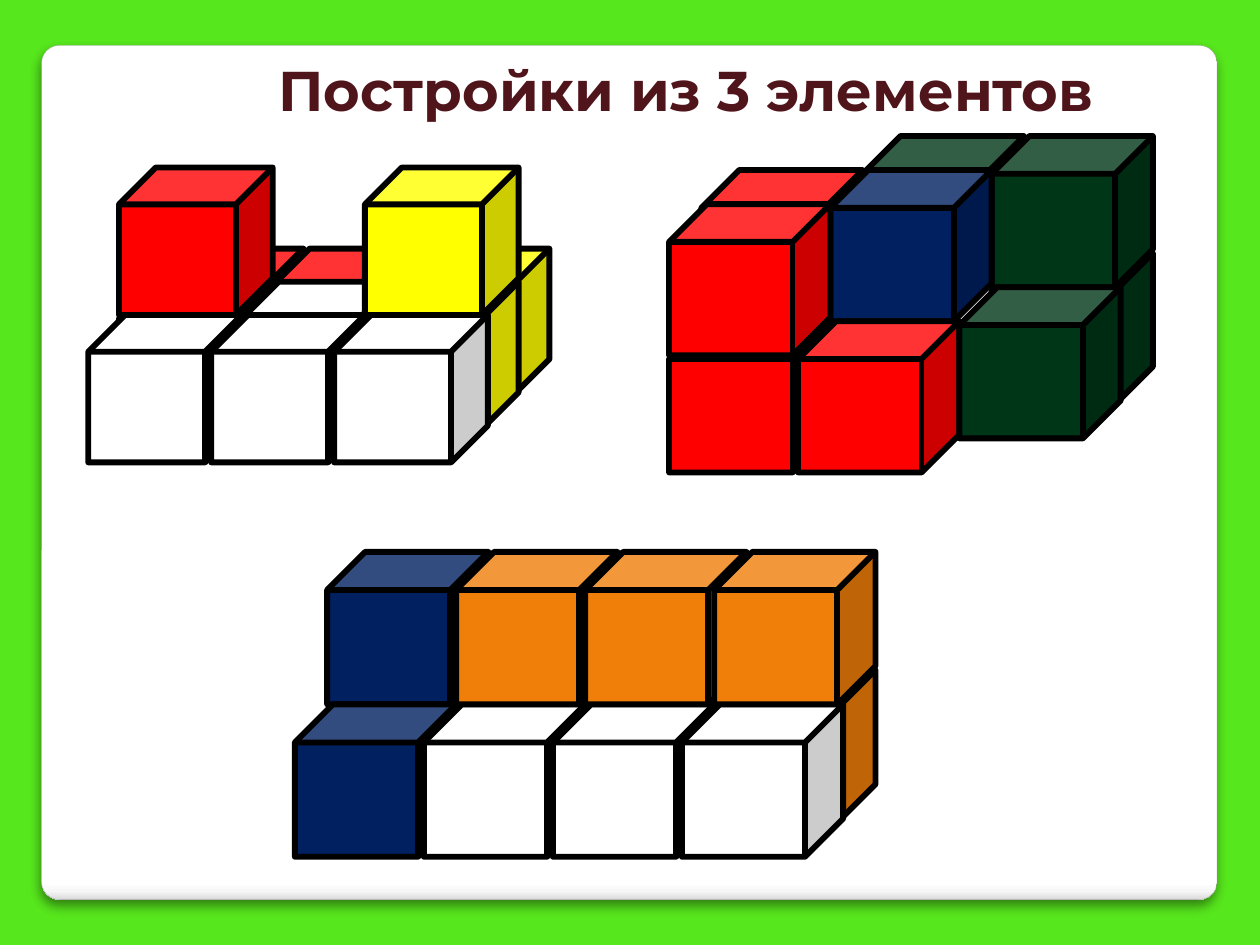
from pptx import Presentation
from pptx.dml.color import RGBColor
from pptx.enum.shapes import MSO_SHAPE
from pptx.enum.text import MSO_ANCHOR, MSO_AUTO_SIZE, PP_ALIGN
from pptx.oxml import parse_xml
from pptx.oxml.ns import nsdecls
from pptx.util import Inches, Pt

GREEN = RGBColor(0x57, 0xE7, 0x1D)
MAROON = RGBColor(0x50, 0x14, 0x1B)
GRAY = RGBColor(0xA4, 0xA4, 0xA4)
BLACK = RGBColor(0x00, 0x00, 0x00)
WHITE = RGBColor(0xFF, 0xFF, 0xFF)
RED = RGBColor(0xFF, 0x00, 0x00)
YELLOW = RGBColor(0xFF, 0xFF, 0x00)
FOREST = RGBColor(0x00, 0x36, 0x18)
NAVY = RGBColor(0x00, 0x20, 0x60)
ORANGE = RGBColor(0xF0, 0x7F, 0x09)

PANEL_STOPS = [(0, "FFFFFF"), (98, "FFFFFF"), (99, "F7F7F7"), (100, "DADADA")]

# Each cube is (column, row from the front, level, colour), listed back to front.
CORNER_BUILDING = [
    (0, 2, 0, RED), (1, 2, 0, RED), (0, 1, 0, RED), (2, 2, 0, YELLOW),
    (1, 1, 0, WHITE), (2, 1, 0, YELLOW), (0, 0, 0, WHITE), (2, 1, 1, YELLOW),
    (1, 0, 0, WHITE), (2, 0, 0, WHITE), (0, 1, 1, RED),
]
STEPPED_BUILDING = [
    (2, 2, 0, FOREST), (0, 0, 0, RED), (0, 1, 1, RED), (1, 2, 1, FOREST),
    (2, 2, 1, FOREST), (1, 1, 1, NAVY), (0, 0, 1, RED), (1, 0, 0, RED),
    (2, 1, 0, FOREST),
]
LONG_BUILDING = [
    (0, 1, 1, NAVY), (0, 0, 0, NAVY), (1, 0, 0, WHITE), (2, 0, 0, WHITE),
    (3, 1, 0, ORANGE), (1, 1, 1, ORANGE), (2, 1, 1, ORANGE),
    (3, 0, 0, WHITE), (3, 1, 1, ORANGE),
]


def add_panel(slide, left, top, width, height):
    panel = slide.shapes.add_shape(
        MSO_SHAPE.ROUNDED_RECTANGLE, left, top, width, height)
    panel.adjustments[0] = 0.021
    panel.line.color.rgb = GRAY
    panel.line.width = Pt(0.16)
    stops = "".join(
        f'<a:gs pos="{position * 1000}"><a:srgbClr val="{color}"/></a:gs>'
        for position, color in PANEL_STOPS)
    properties = panel._element.spPr
    properties.insert(2, parse_xml(
        f'<a:gradFill {nsdecls("a")}><a:gsLst>{stops}</a:gsLst>'
        '<a:lin ang="5400000" scaled="0"/></a:gradFill>'))
    properties.append(parse_xml(
        f'<a:effectLst {nsdecls("a")}>'
        f'<a:outerShdw blurRad="{Pt(6)}" dist="{Pt(4)}" dir="5400000" rotWithShape="0">'
        '<a:srgbClr val="000000"><a:alpha val="44000"/></a:srgbClr>'
        '</a:outerShdw></a:effectLst>'))
    slide.shapes._spTree.insert(2, panel._element)


def add_title(slide, left, top, width, height):
    title = slide.shapes.title
    title.left, title.top, title.width, title.height = left, top, width, height
    frame = title.text_frame
    frame.text = "Постройки из 3 элементов"
    frame.word_wrap = False
    frame.auto_size = MSO_AUTO_SIZE.SHAPE_TO_FIT_TEXT
    frame.vertical_anchor = MSO_ANCHOR.TOP
    paragraph = frame.paragraphs[0]
    paragraph.alignment = PP_ALIGN.LEFT
    paragraph.font.name = "Montserrat"
    paragraph.font.size = Pt(32)
    paragraph.font.bold = True
    paragraph.font.color.rgb = MAROON


def add_building(slide, left, top, cube_width, cube_height, cubes):
    group = slide.shapes.add_group_shape()
    for column, row, level, color in cubes:
        cube = group.shapes.add_shape(
            MSO_SHAPE.CUBE,
            left + int(cube_width * (0.8 * column + 0.2 * row)),
            top - int(cube_height * (0.225 * row + 0.775 * level)),
            cube_width, cube_height)
        cube.shadow.inherit = False
        cube.fill.solid()
        cube.fill.fore_color.rgb = color
        cube.line.color.rgb = BLACK
        cube.line.width = Pt(3.35)


def main():
    presentation = Presentation()
    presentation.slide_width = Inches(10)
    presentation.slide_height = Inches(7.5)
    slide = presentation.slides.add_slide(presentation.slide_layouts[5])
    slide.background.fill.solid()
    slide.background.fill.fore_color.rgb = GREEN

    add_panel(slide, Inches(0.33), Inches(0.36), Inches(9.33), Inches(6.78))
    add_title(slide, Inches(2.11), Inches(0.39), Inches(7.02), Inches(0.64))
    add_building(slide, Inches(0.7), Inches(2.5),
                 Inches(1.22), Inches(1.17), CORNER_BUILDING)
    add_building(slide, Inches(5.31), Inches(2.55),
                 Inches(1.28), Inches(1.2), STEPPED_BUILDING)
    add_building(slide, Inches(2.34), Inches(5.59),
                 Inches(1.28), Inches(1.21), LONG_BUILDING)
    presentation.save("out.pptx")


if __name__ == "__main__":
    main()
